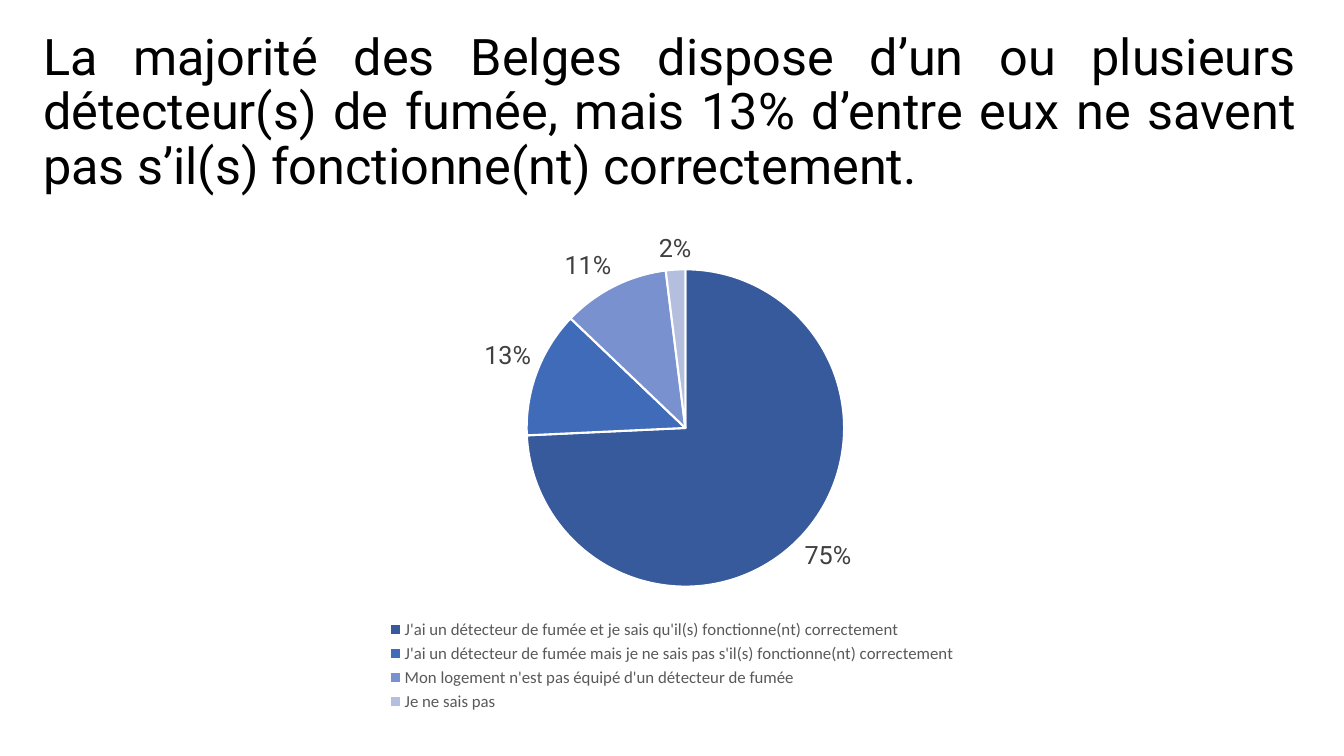
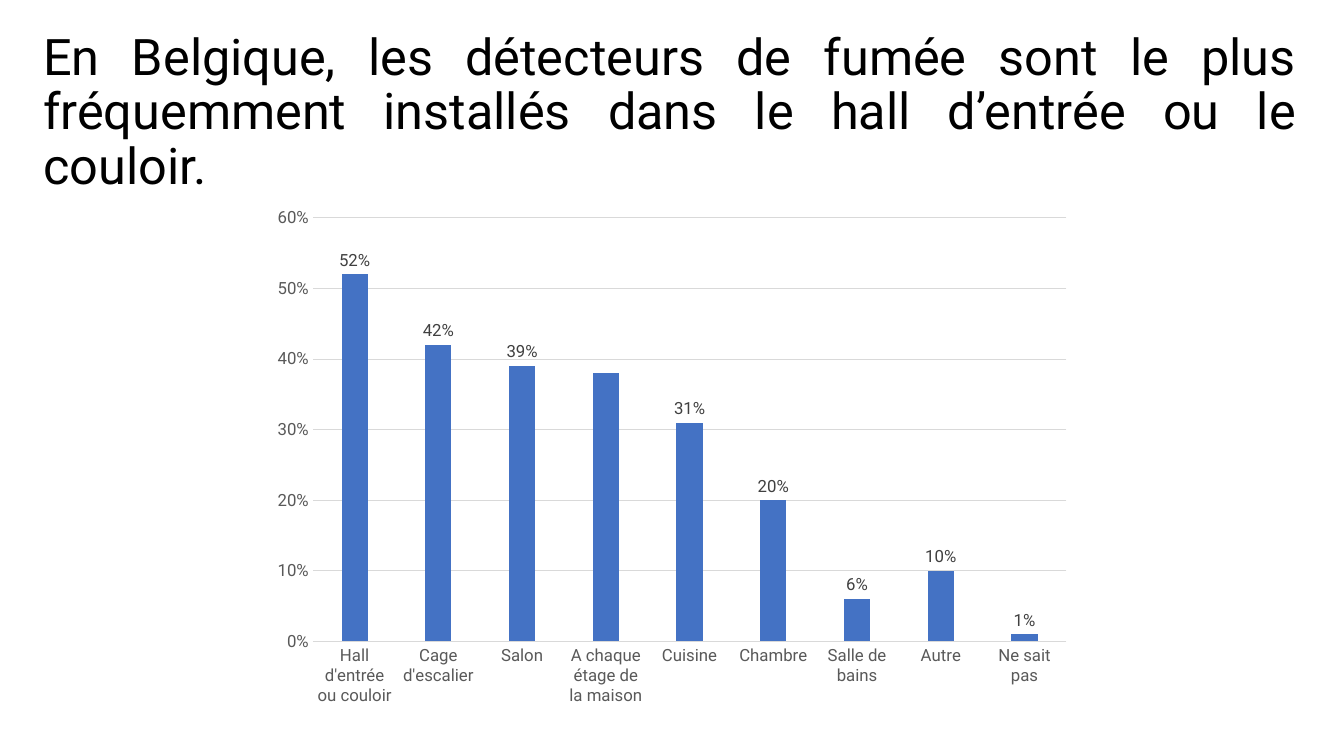
from lxml import etree
from pptx import Presentation, util as u
from pptx.chart.data import CategoryChartData
from pptx.dml.color import RGBColor
from pptx.enum import chart as ch, text
from pptx.oxml.ns import qn

FONT, LEGEND_FONT = "Roboto", "Calibri"
BLACK, GREY, LABEL, GRID, WHITE = "000000", "595959", "404040", "D9D9D9", "FFFFFF"
BAR = "4472C4"
SLICES = ["365A9B", "406BB8", "7991CE", "B4BEDF"]
PERCENT = "0%"

DETECTORS = {
    "J'ai un détecteur de fumée et je sais qu'il(s) fonctionne(nt) correctement": 0.75,
    "J'ai un détecteur de fumée mais je ne sais pas s'il(s) fonctionne(nt) correctement": 0.13,
    "Mon logement n'est pas équipé d'un détecteur de fumée": 0.11,
    "Je ne sais pas": 0.02,
}
ROOMS = {
    "Hall d'entrée ou couloir": 0.52,
    "Cage d'escalier": 0.42,
    "Salon": 0.39,
    "A chaque étage de la maison": 0.38,
    "Cuisine": 0.31,
    "Chambre": 0.2,
    "Salle de bains": 0.06,
    "Autre": 0.1,
    "Ne sait pas": 0.01,
}


def rgb(value):
    return RGBColor.from_string(value)


def set_font(font, size, color, name=FONT):
    font.size, font.name, font.bold = u.Pt(size), name, False
    font.color.rgb = rgb(color)


def fill(fmt, color):
    fmt.fill.solid()
    fmt.fill.fore_color.rgb = rgb(color)


def set_line(line, color, width=0.75):
    line.color.rgb = rgb(color)
    line.width = u.Pt(width)


def add_titled_slide(prs, title):
    s = prs.slides.add_slide(prs.slide_layouts[6])
    tf = s.shapes.add_textbox(*map(u.Inches, (0.33, 0.4, 12.63, 1.45))).text_frame
    tf.word_wrap = True
    tf.vertical_anchor = text.MSO_ANCHOR.MIDDLE
    p = tf.paragraphs[0]
    p.text = title
    p.alignment = text.PP_ALIGN.JUSTIFY
    p.line_spacing = 0.9
    set_font(p.font, 36, BLACK)
    return s


def add_percent_chart(s, kind, box, values, label_size):
    """Add a one-series chart with percentage labels outside its points."""
    data = CategoryChartData(number_format=PERCENT)
    data.categories = list(values)
    data.add_series("Series 1", list(values.values()))
    chart = s.shapes.add_chart(kind, *map(u.Inches, box), data).chart
    chart.has_title = False
    chart.has_legend = False
    set_font(chart.font, 10, BLACK)
    labels = chart.plots[0].series[0].data_labels
    labels.show_value = True
    labels.position = ch.XL_LABEL_POSITION.OUTSIDE_END
    labels.number_format, labels.number_format_is_linked = PERCENT, False
    set_font(labels.font, label_size, LABEL)
    return chart


def place_plot(chart, **shares):
    """Fix the inner plot area, in shares of the chart's box."""
    area = chart.plots[0]._element.getparent()
    for old in area.findall(qn("c:layout")):
        area.remove(old)
    layout = etree.Element(qn("c:layout"))
    manual = etree.SubElement(layout, qn("c:manualLayout"))
    settings = {"layoutTarget": "inner", "xMode": "edge", "yMode": "edge", **shares}
    for tag, value in settings.items():
        etree.SubElement(manual, qn("c:" + tag)).set("val", str(value))
    area.insert(0, layout)


def hide_label(series, index):
    label = etree.Element(qn("c:dLbl"))
    etree.SubElement(label, qn("c:idx")).set("val", str(index))
    etree.SubElement(label, qn("c:delete")).set("val", "1")
    series.data_labels._element.insert(0, label)


def add_pie(s, box, values):
    chart = add_percent_chart(s, ch.XL_CHART_TYPE.PIE, box, values, 18)
    place_plot(chart, x=0.33, y=0.1, w=0.37, h=0.64)
    series = chart.plots[0].series[0]
    for i, color in enumerate(SLICES):
        fmt = series.points[i].format
        fill(fmt, color)
        set_line(fmt.line, WHITE, 1.5)
    chart.has_legend = True
    chart.legend.position = ch.XL_LEGEND_POSITION.BOTTOM
    chart.legend.include_in_layout = False
    set_font(chart.legend.font, 12, GREY, LEGEND_FONT)


def add_columns(s, box, values, unlabelled):
    chart = add_percent_chart(s, ch.XL_CHART_TYPE.COLUMN_CLUSTERED, box, values, 12)
    plot = chart.plots[0]
    plot.gap_width, plot.overlap, plot.vary_by_categories = 219, -27, False
    fill(plot.series[0].format, BAR)
    hide_label(plot.series[0], list(values).index(unlabelled))
    cat, val = chart.category_axis, chart.value_axis
    for axis in (cat, val):
        axis.major_tick_mark = axis.minor_tick_mark = ch.XL_TICK_MARK.NONE
        set_font(axis.tick_labels.font, 12, GREY)
    set_line(cat.format.line, GRID)
    val.format.line.fill.background()
    val.has_major_gridlines = True
    set_line(val.major_gridlines.format.line, GRID)
    val.minimum_scale, val.maximum_scale, val.major_unit = 0, 0.6, 0.1
    val.tick_labels.number_format = PERCENT
    val.tick_labels.number_format_is_linked = False


def main():
    prs = Presentation()
    prs.slide_width, prs.slide_height = u.Inches(13.33), u.Inches(7.5)
    s = add_titled_slide(
        prs, "La majorité des Belges dispose d’un ou plusieurs détecteur(s) de fumée, "
        "mais 13% d’entre eux ne savent pas s’il(s) fonctionne(nt) correctement.")
    add_pie(s, (2.38, 2.18, 8.58, 4.92), DETECTORS)
    s = add_titled_slide(
        prs, "En Belgique, les détecteurs de fumée sont le plus fréquemment installés "
        "dans le hall d’entrée ou le couloir.")
    add_columns(s, (2.59, 1.96, 8.15, 5.14), ROOMS, "A chaque étage de la maison")
    prs.save("out.pptx")


if __name__ == "__main__":
    main()
